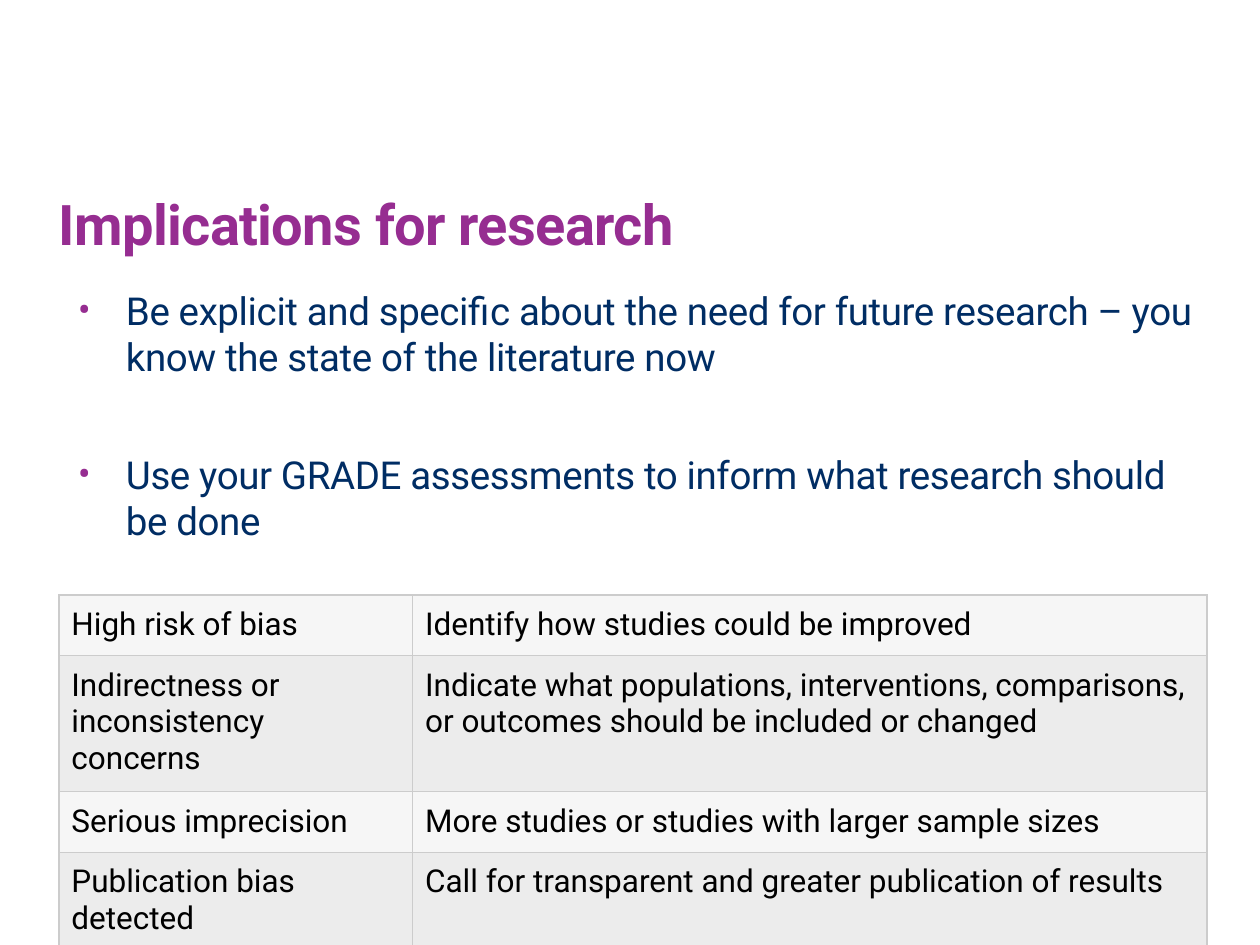
from dataclasses import dataclass

from lxml.etree import SubElement
from pptx import Presentation
from pptx.dml.color import RGBColor
from pptx.enum.text import MSO_ANCHOR
from pptx.oxml.ns import qn
from pptx.util import Cm, Pt


@dataclass(frozen=True)
class Theme:
    font: str = "Roboto"
    purple: str = "962D91"
    navy: str = "002D64"
    black: str = "000000"
    border: str = "CCCCCC"
    bands: tuple = ("F6F6F6", "ECECEC")
    title_size: float = 32
    body_size: float = 22
    table_size: float = 18
    bullet_gap: float = 41
    border_width: float = 1


THEME = Theme()

BULLETS = [
    "Be explicit and specific about the need for future research – you know the state of the literature now",
    "Use your GRADE assessments to inform what research should be done",
]

ROWS = [
    (1.2, "High risk of bias", "Identify how studies could be improved"),
    (2.69, "Indirectness or inconsistency concerns",
     "Indicate what populations, interventions, comparisons, or outcomes should be included or changed"),
    (1.2, "Serious imprecision", "More studies or studies with larger sample sizes"),
    (1.94, "Publication bias detected", "Call for transparent and greater publication of results"),
]


def add_run(paragraph, text, size, color, bold=False, spacing=0):
    run = paragraph.add_run()
    run.text = text
    run.font.name = THEME.font
    run.font.size = Pt(size)
    run.font.bold = bold
    run.font.color.rgb = RGBColor.from_string(color)
    if spacing:
        run.font._element.set("spc", str(round(spacing * 100)))


def add_text_frame(slide, left, top, width, height, anchor=MSO_ANCHOR.TOP):
    shape = slide.shapes.add_textbox(Cm(left), Cm(top), Cm(width), Cm(height))
    frame = shape.text_frame
    frame.word_wrap = True
    frame.vertical_anchor = anchor
    frame.margin_left = frame.margin_right = frame.margin_top = frame.margin_bottom = 0
    return frame


def add_title(slide, text):
    frame = add_text_frame(slide, 1.19, 3.43, 22.25, 1.75, MSO_ANCHOR.BOTTOM)
    add_run(frame.paragraphs[0], text, THEME.title_size, THEME.purple, bold=True, spacing=-0.4)


def set_bullet(paragraph):
    properties = paragraph._p.get_or_add_pPr()
    properties.set("marL", str(Cm(1.4)))
    properties.set("indent", str(Cm(-0.97)))
    color = SubElement(properties, qn("a:buClr"))
    SubElement(color, qn("a:srgbClr"), val=THEME.purple)
    SubElement(properties, qn("a:buFont"), typeface=THEME.font)
    SubElement(properties, qn("a:buChar"), char="•")


def add_bullets(slide, texts):
    frame = add_text_frame(slide, 1.14, 5.79, 23.19, 12.4)
    for index, text in enumerate(texts):
        paragraph = frame.add_paragraph() if index else frame.paragraphs[0]
        set_bullet(paragraph)
        if index:
            paragraph.space_before = Pt(THEME.bullet_gap)
        add_run(paragraph, text, THEME.body_size, THEME.navy, spacing=-0.2)


def set_borders(cell):
    properties = cell._tc.get_or_add_tcPr()
    for side in ("L", "R", "T", "B"):
        line = SubElement(properties, qn(f"a:ln{side}"), w=str(Pt(THEME.border_width)))
        fill = SubElement(line, qn("a:solidFill"))
        SubElement(fill, qn("a:srgbClr"), val=THEME.border)


def fill_cell(cell, text, band):
    cell.margin_left = cell.margin_right = Cm(0.25)
    cell.margin_top = cell.margin_bottom = Cm(0.23)
    set_borders(cell)
    cell.fill.solid()
    cell.fill.fore_color.rgb = RGBColor.from_string(band)
    add_run(cell.text_frame.paragraphs[0], text, THEME.table_size, THEME.black)


def add_grade_table(slide, rows):
    widths = (7.13, 16.01)
    height = sum(row[0] for row in rows)
    shape = slide.shapes.add_table(
        len(rows), len(widths), Cm(1.19), Cm(11.99), Cm(sum(widths)), Cm(height))
    table = shape.table
    table.first_row = False
    table.horz_banding = False
    for column, width in zip(table.columns, widths):
        column.width = Cm(width)
    for row_index, (row_height, *texts) in enumerate(rows):
        table.rows[row_index].height = Cm(row_height)
        band = THEME.bands[row_index % len(THEME.bands)]
        for column_index, text in enumerate(texts):
            fill_cell(table.cell(row_index, column_index), text, band)


def main():
    presentation = Presentation()
    presentation.slide_width = Cm(25.4)
    presentation.slide_height = Cm(19.05)
    slide = presentation.slides.add_slide(presentation.slide_layouts[6])
    add_title(slide, "Implications for research")
    add_bullets(slide, BULLETS)
    add_grade_table(slide, ROWS)
    presentation.save("out.pptx")


if __name__ == "__main__":
    main()
